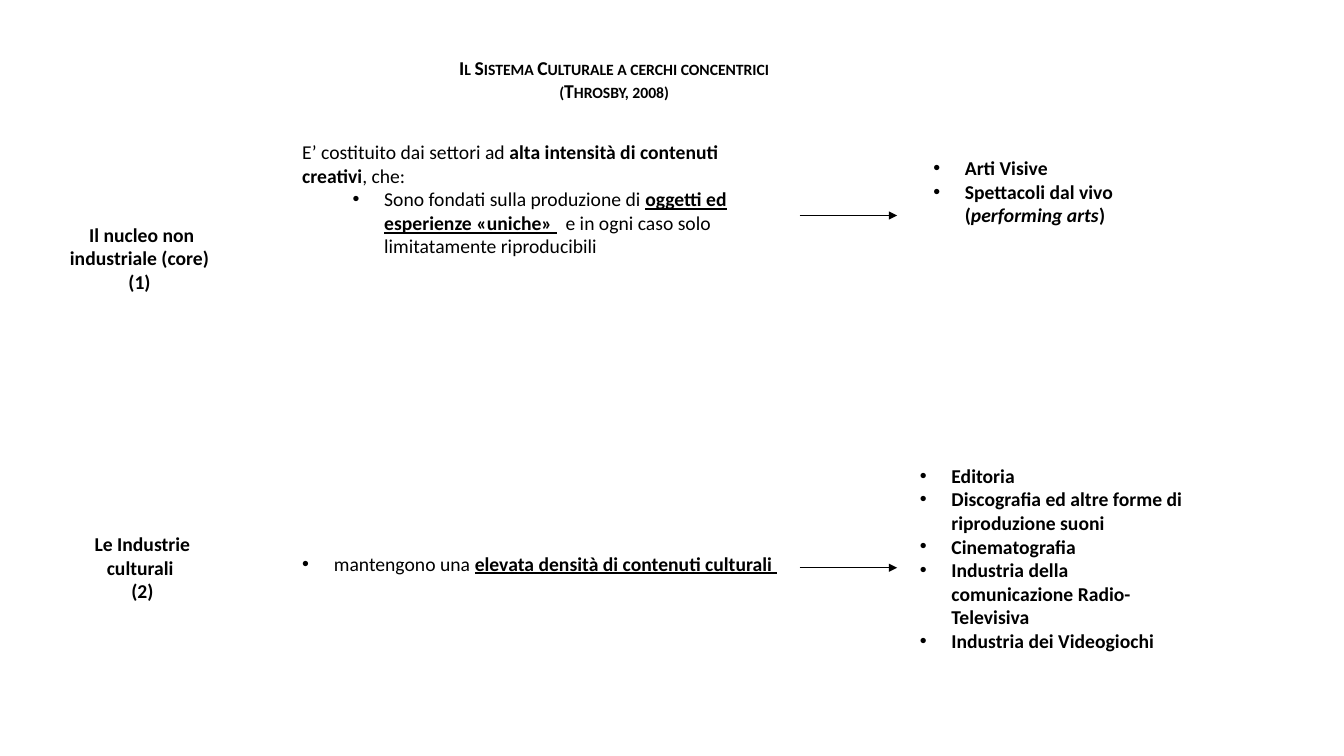
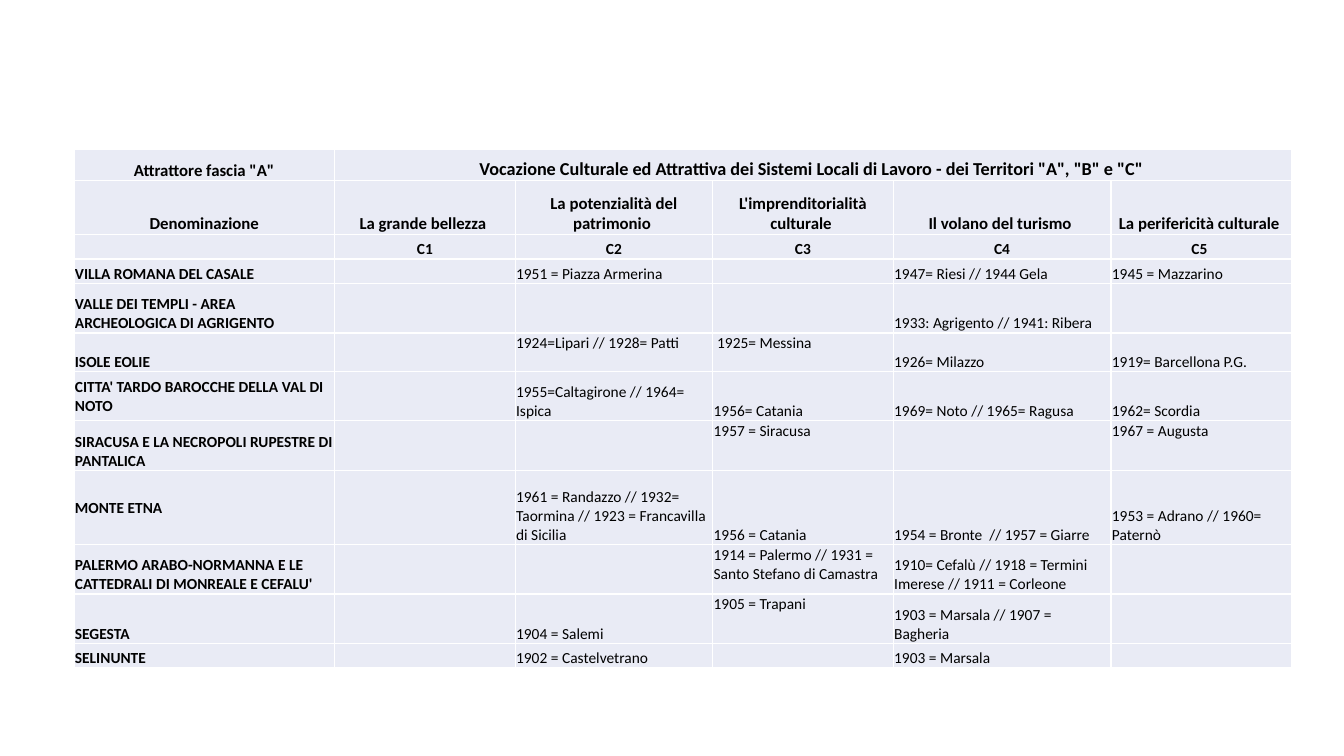
from dataclasses import dataclass, field

from lxml.etree import SubElement
from pptx import Presentation
from pptx.dml.color import RGBColor
from pptx.enum.shapes import MSO_CONNECTOR
from pptx.enum.text import MSO_ANCHOR, MSO_AUTO_SIZE, PP_ALIGN
from pptx.oxml.ns import qn
from pptx.util import Inches, Length, Pt

BLACK = RGBColor(0x00, 0x00, 0x00)
WHITE = RGBColor(0xFF, 0xFF, 0xFF)
PALE_BLUE = RGBColor(0xE9, 0xEB, 0xF5)
FONT = "Calibri"
BODY_SIZE = 14
SLIDE_WIDTH, SLIDE_HEIGHT = Inches(13.33), Inches(7.5)
BULLET_INDENT = 2.35
LABEL_HEIGHT = 10.8
DESCRIPTION_LEFT = 21.75
ARROW_LEFT, ARROW_RIGHT = 59.5, 66.75

PLAIN = {"bold": False}
BOLD = {"bold": True}
UNDERLINED = {"bold": True, "underline": True}
ITALIC = {"bold": True, "italic": True}

ANCHORS = {"t": MSO_ANCHOR.TOP, "m": MSO_ANCHOR.MIDDLE, "b": MSO_ANCHOR.BOTTOM}
TABLE_LEFT, TABLE_TOP = 5.5, 19.8
COLUMN_WIDTHS = (19.4, 13.43, 14.7, 13.43, 16.2, 13.43)
ONE_LINE, TWO_LINES, THREE_LINES = 3.27, 6.53, 9.85
HEADER_ROWS = 3


@dataclass
class Span:
    """A stretch of text with one format."""

    text: str
    style: dict = field(default_factory=lambda: BOLD)


@dataclass
class Para:
    """A paragraph, with the left indent of its bullet if it has one."""

    spans: list[Span]
    bullet: float = 0
    centred: bool = False


@dataclass
class Box:
    """A text box placed in percent of the slide."""

    left: float
    top: float
    width: float
    height: float
    paras: list[Para]
    small_caps: bool = False


@dataclass
class Row:
    """A table row: height in percent, six texts and six anchors."""

    height: float
    texts: tuple[str, ...]
    anchors: str = "bbbbbb"
    size: int = 11


def bullets(*texts: str) -> list[Para]:
    """Make one bold bullet for each text."""
    return [Para([Span(text)], BULLET_INDENT) for text in texts]


def label(*texts: str) -> list[Para]:
    """Make one bold centred paragraph for each text."""
    return [Para([Span(text)], centred=True) for text in texts]


BOXES = [
    Box(32.1, 6.7, 27.2, 7.6,
        label("Il Sistema Culturale a cerchi concentrici (Throsby, 2008)"), True),
    Box(2.9, 28.8, 15.3, LABEL_HEIGHT,
        label("Il nucleo non industriale (core) ", "(1) ")),
    Box(DESCRIPTION_LEFT, 17.9, 37.6, 17.1, [
        Para([Span("E’ costituito dai settori ad ", PLAIN),
              Span("alta intensità di contenuti creativi"),
              Span(", che:", PLAIN)]),
        Para([Span("Sono fondati sulla produzione di ", PLAIN),
              Span("oggetti ed esperienze «uniche»", UNDERLINED),
              Span(" ", {"bold": False, "underline": True}),
              Span("  e in ogni caso solo limitatamente riproducibili", PLAIN)], 6.1),
    ]),
    Box(4.2, 69.7, 12.8, LABEL_HEIGHT, label("Le Industrie culturali ", "(2)")),
    Box(DESCRIPTION_LEFT, 72.3, 38.6, 4.5, [
        Para([Span("mantengono una ", PLAIN),
              Span("elevata densità di contenuti culturali ", UNDERLINED)], BULLET_INDENT),
    ]),
    Box(67.7, 60.7, 21.8, 26.5, bullets(
        "Editoria",
        "Discografia ed altre forme di riproduzione suoni",
        "Cinematografia",
        "Industria della comunicazione Radio-Televisiva",
        "Industria dei Videogiochi")),
    Box(68.7, 20, 17.4, LABEL_HEIGHT, bullets("Arti Visive") + [
        Para([Span("Spettacoli dal vivo ("), Span("performing arts", ITALIC), Span(")")],
             BULLET_INDENT),
    ]),
]
ARROW_TOPS = (28.5, 75.1)

ROWS = [
    Row(4.1, ('Attrattore fascia "A"',
              'Vocazione Culturale ed Attrattiva dei Sistemi Locali di Lavoro'
              ' - dei Territori "A", "B" e "C" ', "", "", "", ""), size=12),
    Row(7.1, ("Denominazione", "La grande bellezza ", "La potenzialità del patrimonio ",
              "L'imprenditorialità culturale ", "Il volano del turismo ",
              "La perifericità culturale "), size=12),
    Row(ONE_LINE, ("", "C1", "C2", "C3", "C4", "C5 ")),
    Row(ONE_LINE, ("VILLA ROMANA DEL CASALE", "", "1951 = Piazza Armerina", "",
                   "1947= Riesi // 1944 Gela", "1945 = Mazzarino")),
    Row(TWO_LINES, ("VALLE DEI TEMPLI - AREA ARCHEOLOGICA DI AGRIGENTO", "", "", "",
                    "1933: Agrigento // 1941: Ribera", "")),
    Row(5.1, ("ISOLE EOLIE", "", "1924=Lipari // 1928= Patti", " 1925= Messina",
              "1926= Milazzo", "1919= Barcellona P.G."), "bbttbb"),
    Row(TWO_LINES, ("CITTA' TARDO BAROCCHE DELLA VAL DI NOTO", "",
                    "1955=Caltagirone // 1964= Ispica", "1956= Catania",
                    "1969= Noto // 1965= Ragusa", "1962= Scordia"), "mbbbbb"),
    Row(TWO_LINES, ("SIRACUSA E LA NECROPOLI RUPESTRE DI PANTALICA", "", "",
                    "1957 = Siracusa", "", "1967 = Augusta"), "bbbtbt"),
    Row(THREE_LINES, ("MONTE ETNA", "",
                      "1961 = Randazzo // 1932= Taormina // 1923 = Francavilla di Sicilia",
                      "1956 = Catania", "1954 = Bronte  // 1957 = Giarre",
                      "1953 = Adrano // 1960= Paternò"), "mbbbbb"),
    Row(TWO_LINES, ("PALERMO ARABO-NORMANNA E LE CATTEDRALI DI MONREALE E CEFALU'", "", "",
                    "1914 = Palermo // 1931 = Santo Stefano di Camastra",
                    "1910= Cefalù // 1918 = Termini Imerese // 1911 = Corleone", ""), "bbbtbb"),
    Row(TWO_LINES, ("SEGESTA", "", "1904 = Salemi", "1905 = Trapani",
                    "1903 = Marsala // 1907 = Bagheria", ""), "bbbtbb"),
    Row(ONE_LINE, ("SELINUNTE", "", "1902 = Castelvetrano", "", "1903 = Marsala", "")),
]


def across(percent: float) -> Length:
    """Turn a share of the slide width into a length."""
    return Length(round(SLIDE_WIDTH * percent / 100))


def down(percent: float) -> Length:
    """Turn a share of the slide height into a length."""
    return Length(round(SLIDE_HEIGHT * percent / 100))


def add_span(para, span: Span, size: int):
    """Write one formatted run."""
    run = para.add_run()
    run.text = span.text
    for name, value in {"name": FONT, "size": Pt(size), **span.style}.items():
        setattr(run.font, name, value)
    run.font.color.rgb = BLACK
    return run


def add_bullet(para, indent: float) -> None:
    """Give a paragraph a hanging round bullet."""
    properties = para._p.get_or_add_pPr()
    properties.set("marL", str(across(indent)))
    properties.set("indent", str(-across(BULLET_INDENT)))
    SubElement(properties, qn("a:buFont"), typeface="Arial")
    SubElement(properties, qn("a:buChar"), char="•")


def add_box(page, box: Box) -> None:
    """Draw one text box."""
    frame = page.shapes.add_textbox(
        across(box.left), down(box.top), across(box.width), down(box.height)).text_frame
    frame.word_wrap = True
    frame.auto_size = MSO_AUTO_SIZE.SHAPE_TO_FIT_TEXT
    for number, entry in enumerate(box.paras):
        para = frame.add_paragraph() if number else frame.paragraphs[0]
        para.alignment = PP_ALIGN.CENTER if entry.centred else PP_ALIGN.LEFT
        if entry.bullet:
            add_bullet(para, entry.bullet)
        for span in entry.spans:
            run = add_span(para, span, BODY_SIZE)
            if box.small_caps:
                run._r.get_or_add_rPr().set("cap", "small")


def add_arrow(page, top: float) -> None:
    """Draw a thin arrow from a description to its examples."""
    arrow = page.shapes.add_connector(
        MSO_CONNECTOR.STRAIGHT, across(ARROW_LEFT), down(top), across(ARROW_RIGHT), down(top))
    arrow.line.color.rgb = BLACK
    arrow.line.width = Pt(0.5)
    SubElement(arrow.line._get_or_add_ln(), qn("a:tailEnd"), type="triangle")
    SubElement(arrow._element.spPr, qn("a:effectLst"))


def add_borders(cell) -> None:
    """Draw white lines on the four sides of a cell."""
    properties = cell._tc.get_or_add_tcPr()
    for side in ("lnL", "lnR", "lnT", "lnB"):
        line = SubElement(properties, qn(f"a:{side}"), w=str(Pt(1)))
        SubElement(SubElement(line, qn("a:solidFill")), qn("a:srgbClr"), val=str(WHITE))


def fill_cell(cell, span: Span, size: int, anchor: str, centred: bool) -> None:
    """Format one table cell and write its text."""
    add_borders(cell)
    cell.fill.solid()
    cell.fill.fore_color.rgb = PALE_BLUE
    edge = Inches(0.01)
    layout = {"margin_left": edge, "margin_right": edge, "margin_top": edge,
              "margin_bottom": 0, "vertical_anchor": ANCHORS[anchor]}
    for name, value in layout.items():
        setattr(cell, name, value)
    para = cell.text_frame.paragraphs[0]
    para.alignment = PP_ALIGN.CENTER if centred else PP_ALIGN.LEFT
    if span.text:
        add_span(para, span, size)
    else:
        SubElement(para._p, qn("a:endParaRPr"), sz=str(size * 100))


def add_attractor_table(page) -> None:
    """Draw the table of attractors and cultural vocations."""
    table = page.shapes.add_table(
        len(ROWS), len(COLUMN_WIDTHS), across(TABLE_LEFT), down(TABLE_TOP),
        across(sum(COLUMN_WIDTHS)), down(sum(row.height for row in ROWS))).table
    table.first_row = table.horz_banding = False
    for column, width in zip(table.columns, COLUMN_WIDTHS):
        column.width = across(width)
    for row_number, row in enumerate(ROWS):
        table.rows[row_number].height = down(row.height)
        header = row_number < HEADER_ROWS
        for column_number, (text, anchor) in enumerate(zip(row.texts, row.anchors)):
            style = BOLD if header or column_number == 0 else PLAIN
            size = 13 if (row_number, column_number) == (0, 1) else row.size
            fill_cell(table.cell(row_number, column_number), Span(text, style),
                      size, anchor, header)
    table.cell(0, 1).merge(table.cell(0, len(COLUMN_WIDTHS) - 1))


def main() -> None:
    """Build and save the deck."""
    deck = Presentation()
    deck.slide_width, deck.slide_height = SLIDE_WIDTH, SLIDE_HEIGHT
    blank = deck.slide_layouts[6]
    circles_page = deck.slides.add_slide(blank)
    for box in BOXES:
        add_box(circles_page, box)
    for top in ARROW_TOPS:
        add_arrow(circles_page, top)
    add_attractor_table(deck.slides.add_slide(blank))
    deck.save("out.pptx")


if __name__ == "__main__":
    main()
